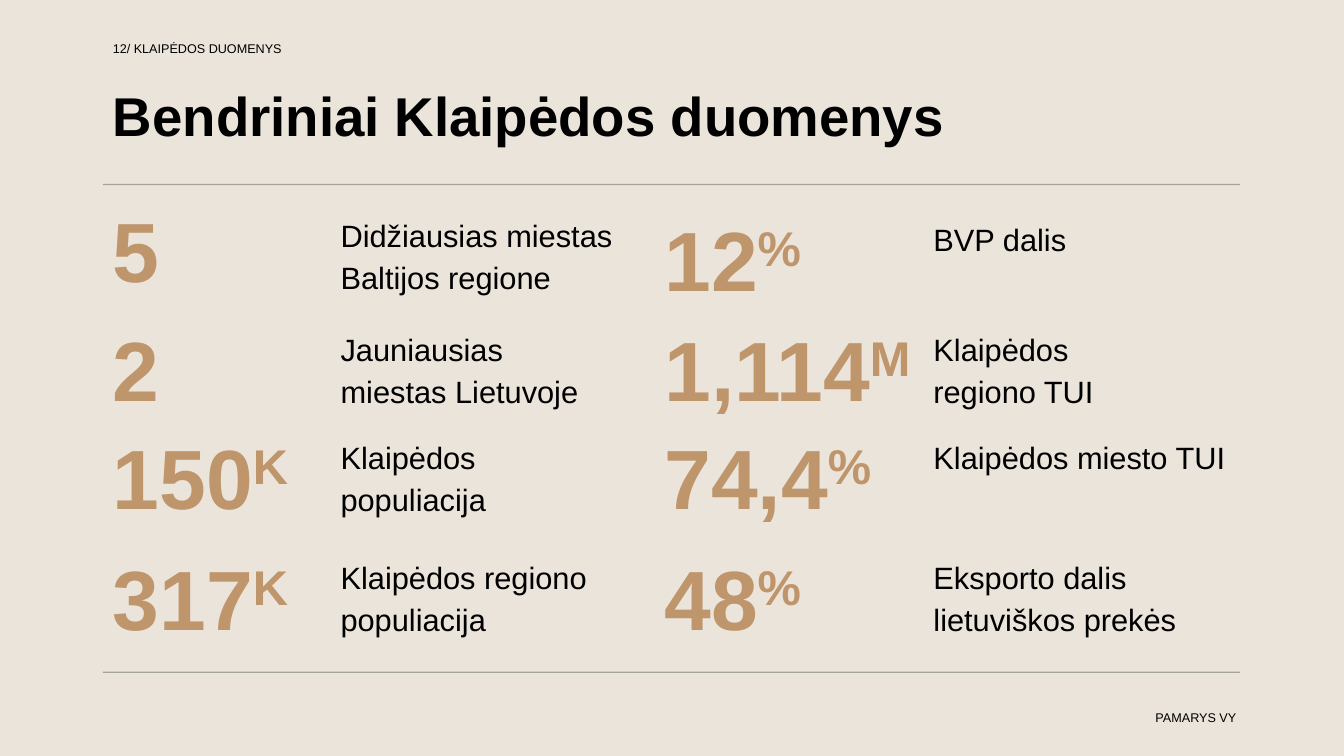
from lxml.etree import SubElement
from pptx import Presentation
from pptx.dml.color import RGBColor
from pptx.enum.shapes import MSO_CONNECTOR
from pptx.enum.text import MSO_ANCHOR, MSO_AUTO_SIZE, PP_ALIGN
from pptx.oxml.ns import qn
from pptx.util import Pt

PX = 9144
LEFT_EDGE, RIGHT_EDGE = 102, 1230


def color(hex_value):
    return RGBColor.from_string(hex_value)


def write(text, box, holder=None, size=22, ink="000000", bold=False, raised="",
          spacing=None, align=PP_ALIGN.LEFT, anchor=MSO_ANCHOR.TOP):
    left, top, width, height = [value * PX for value in box]
    if holder is None:
        holder = slide.shapes.add_textbox(left, top, width, height)
    else:
        holder.left, holder.top, holder.width, holder.height = left, top, width, height
    frame = holder.text_frame
    frame.word_wrap = True
    frame.auto_size = MSO_AUTO_SIZE.NONE
    frame.vertical_anchor = anchor
    paragraph = frame.paragraphs[0]
    paragraph.alignment = align
    if spacing:
        paragraph.line_spacing = spacing
    for part, baseline in ((text, 0), (raised, 30000)):
        if part:
            run = paragraph.add_run()
            run.text = part
            run.font.name = "Arial"
            run.font.size = Pt(size)
            run.font.bold = bold
            run.font.color.rgb = color(ink)
            if baseline:
                run._r.get_or_add_rPr().set("baseline", str(baseline))


deck = Presentation()
deck.slide_width, deck.slide_height = 1333 * PX, 750 * PX
slide = deck.slides.add_slide(deck.slide_layouts[5])
slide.background.fill.solid()
slide.background.fill.fore_color.rgb = color("EAE4DA")

write("12/ KLAIPĖDOS DUOMENYS", (LEFT_EDGE, 36, 302, 25), size=9)
write("Bendriniai Klaipėdos duomenys", (LEFT_EDGE, 77, 1142, 82), holder=slide.shapes.title,
      size=39, bold=True, spacing=0.9, anchor=MSO_ANCHOR.MIDDLE)

for rule_y in (183, 667):
    rule = slide.shapes.add_connector(MSO_CONNECTOR.STRAIGHT, LEFT_EDGE * PX, rule_y * PX,
                                      RIGHT_EDGE * PX, rule_y * PX)
    rule.line.width = Pt(1)
    rule.line.color.rgb = color("5E685A")
    tint = rule.line._ln.find(".//" + qn("a:srgbClr"))
    SubElement(tint, qn("a:alpha")).set("val", "50000")
    SubElement(rule._element.spPr, qn("a:effectLst"))

columns = [
    (LEFT_EDGE, 236, 328, [
        (198, "5", "", 206, 297, "Didžiausias miestas Baltijos regione"),
        (316, "2", "", 319, 279, "Jauniausias miestas Lietuvoje"),
        (423, "150", "K", 426, 253, "Klaipėdos populiacija"),
        (543, "317", "K", 545, 297, "Klaipėdos regiono populiacija"),
    ]),
    (649, 301, 916, [
        (207, "12", "%", 210, 158, "BVP dalis"),
        (316, "1,114", "M", 319, 250, "Klaipėdos regiono TUI"),
        (423, "74,4", "%", 426, 378, "Klaipėdos miesto TUI"),
        (543, "48", "%", 545, 356, "Eksporto dalis lietuviškos prekės"),
    ]),
]
for figure_x, figure_width, label_x, facts in columns:
    for figure_y, figure, unit, label_y, label_width, label in facts:
        write(figure, (figure_x, figure_y, figure_width, 111), size=60, ink="BF956B",
              bold=True, raised=unit, spacing=0.9, anchor=MSO_ANCHOR.MIDDLE)
        write(label, (label_x, label_y, label_width, 91), spacing=Pt(29.6))

write("PAMARYS VY", (990, 699, 246, 25), size=9, align=PP_ALIGN.RIGHT)

deck.save("out.pptx")
